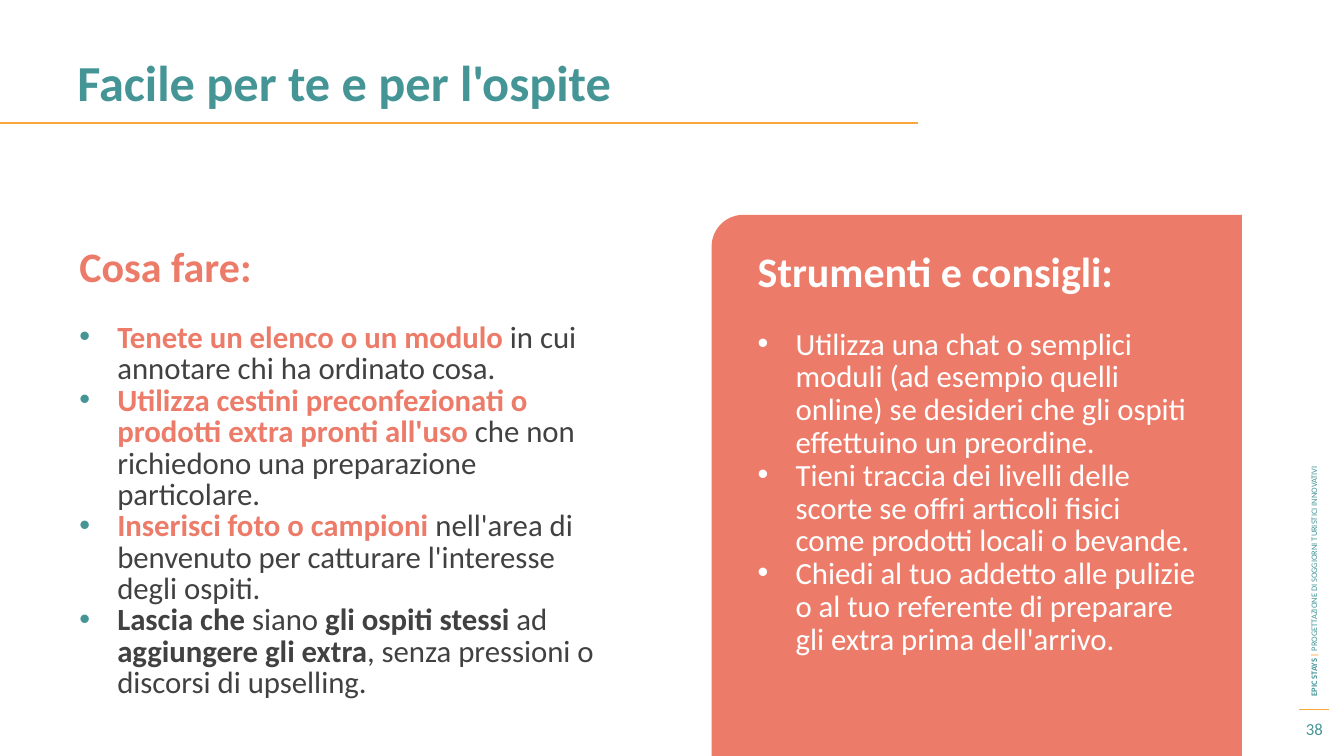
from lxml import etree
from pptx import Presentation
from pptx.dml.color import RGBColor
from pptx.enum.shapes import MSO_CONNECTOR, MSO_SHAPE
from pptx.enum.text import MSO_ANCHOR, PP_ALIGN
from pptx.oxml.ns import qn
from pptx.util import Pt

TEAL = RGBColor(0x45, 0x95, 0x97)
CORAL = RGBColor(0xEC, 0x7C, 0x69)
ORANGE = RGBColor(0xFB, 0xA6, 0x3B)
GREY = RGBColor(0x41, 0x41, 0x41)
WHITE = RGBColor(0xFF, 0xFF, 0xFF)

STRAIGHT = MSO_CONNECTOR.STRAIGHT
ONE_ROUND_CORNER = MSO_SHAPE.ROUND_1_RECTANGLE
TOP, MIDDLE = MSO_ANCHOR.TOP, MSO_ANCHOR.MIDDLE
CENTER = PP_ALIGN.CENTER

FONT = "Calibri"
HEADING_SIZE, BODY_SIZE = 30, 22
BULLET_INDENT = 27

# Each run is (text, colour, bold).
TO_DO = [
    [("Tenete un elenco o un modulo ", CORAL, True),
     ("in cui annotare chi ha ordinato cosa.", GREY, False)],
    [("Utilizza cestini preconfezionati o prodotti extra pronti all'uso ", CORAL, True),
     ("che non richiedono una preparazione particolare.", GREY, False)],
    [("Inserisci foto o campioni ", CORAL, True),
     ("nell'area di benvenuto per catturare l'interesse degli ospiti.", GREY, False)],
    [("Lascia che ", GREY, True), ("siano ", GREY, False),
     ("gli ospiti stessi ", GREY, True), ("ad", GREY, False),
     (" aggiungere gli extra", GREY, True),
     (", senza pressioni o discorsi di upselling.", GREY, False)],
]
TIPS = [
    "Utilizza una chat o semplici moduli (ad esempio quelli online) "
    "se desideri che gli ospiti effettuino un preordine.",
    "Tieni traccia dei livelli delle scorte se offri articoli fisici "
    "come prodotti locali o bevande.",
    "Chiedi al tuo addetto alle pulizie o al tuo referente di preparare "
    "gli extra prima dell'arrivo.",
]
FOOTER = [
    ("EPIC STAYS ", TEAL, True),
    ("| ", ORANGE, True),
    ("PROGETTAZIONE DI SOGGIORNI TURISTICI INNOVATIVI", TEAL, False),
]


def add_text_frame(slide, left, top, width, height, anchor=TOP, rotation=0):
    box = slide.shapes.add_textbox(Pt(left), Pt(top), Pt(width), Pt(height))
    box.rotation = rotation
    frame = box.text_frame
    frame.word_wrap = True
    frame.vertical_anchor = anchor
    return frame


def add_bullet(paragraph, color):
    properties = paragraph._p.get_or_add_pPr()
    properties.set("marL", str(Pt(BULLET_INDENT)))
    properties.set("indent", str(-Pt(BULLET_INDENT)))
    bullet_color = etree.SubElement(properties, qn("a:buClr"))
    etree.SubElement(bullet_color, qn("a:srgbClr"), val=str(color))
    etree.SubElement(properties, qn("a:buFont"), typeface="Arial")
    etree.SubElement(properties, qn("a:buChar"), char="•")


def write_paragraph(frame, runs, size, spacing=None, bullet_color=None):
    """Fill the empty first paragraph of the frame, or append a new one."""
    paragraph = frame.paragraphs[0]
    if paragraph.runs:
        paragraph = frame.add_paragraph()
    if bullet_color is not None:
        add_bullet(paragraph, bullet_color)
    if spacing:
        paragraph.line_spacing = Pt(spacing)
    paragraph.font.name = FONT
    paragraph.font.size = Pt(size)
    for text, color, bold in runs:
        run = paragraph.add_run()
        run.text = text
        run.font.color.rgb = color
        run.font.bold = bold
    return paragraph


def add_rule(slide, start, end, y, width):
    rule = slide.shapes.add_connector(STRAIGHT, Pt(start), Pt(y), Pt(end), Pt(y))
    rule.line.color.rgb = ORANGE
    rule.line.width = Pt(width)
    etree.SubElement(rule._element.spPr, qn("a:effectLst"))


def add_panel(slide, left, top, width, height):
    """Add a panel rounded at its top left, by a quarter turn of the preset."""
    shift = (width - height) / 2
    panel = slide.shapes.add_shape(
        ONE_ROUND_CORNER, Pt(left + shift), Pt(top - shift), Pt(height), Pt(width))
    panel.rotation = 270
    panel.adjustments[0] = 0.06
    panel.shadow.inherit = False
    panel.fill.solid()
    panel.fill.fore_color.rgb = CORAL
    panel.line.fill.background()


def add_margin(slide):
    add_rule(slide, 928, 949, 507, 0.75)
    footer = add_text_frame(slide, 730.8, 289.4, 415.4, 14.4, MIDDLE, 270)
    write_paragraph(footer, FOOTER, 6)
    number = add_text_frame(slide, 920.2, 508.3, 37.4, 24.5, MIDDLE)
    write_paragraph(number, [("38", TEAL, False)], 12).alignment = CENTER


def add_title(slide):
    title = add_text_frame(slide, 48.2, 38.9, 864, 63.4)
    write_paragraph(title, [("Facile per te e per l'ospite", TEAL, True)], 36, 37.2)
    add_rule(slide, 0, 656, 87.8, 1.5)


def add_to_do(slide):
    heading = add_text_frame(slide, 49.7, 175, 442, 63.4)
    write_paragraph(heading, [("Cosa fare:", CORAL, True)], HEADING_SIZE, 29)
    body = add_text_frame(slide, 49.7, 227.5, 389.5, 288)
    for runs in TO_DO:
        write_paragraph(body, runs, BODY_SIZE, 22.4, TEAL)


def add_tips(slide):
    spacing = 23.4
    add_panel(slide, 508.3, 153.4, 378.7, 386.6)
    body = add_text_frame(slide, 534.2, 184.3, 326.9, 258.5)
    heading = write_paragraph(
        body, [("Strumenti e consigli:", WHITE, True)], HEADING_SIZE, spacing)
    heading.space_after = Pt(spacing)
    for tip in TIPS:
        write_paragraph(body, [(tip, WHITE, False)], BODY_SIZE, spacing, WHITE)


def main():
    deck = Presentation()
    deck.slide_width, deck.slide_height = Pt(960), Pt(540)
    slide = deck.slides.add_slide(deck.slide_layouts[6])
    add_margin(slide)
    add_title(slide)
    add_to_do(slide)
    add_tips(slide)
    deck.save("out.pptx")


if __name__ == "__main__":
    main()
